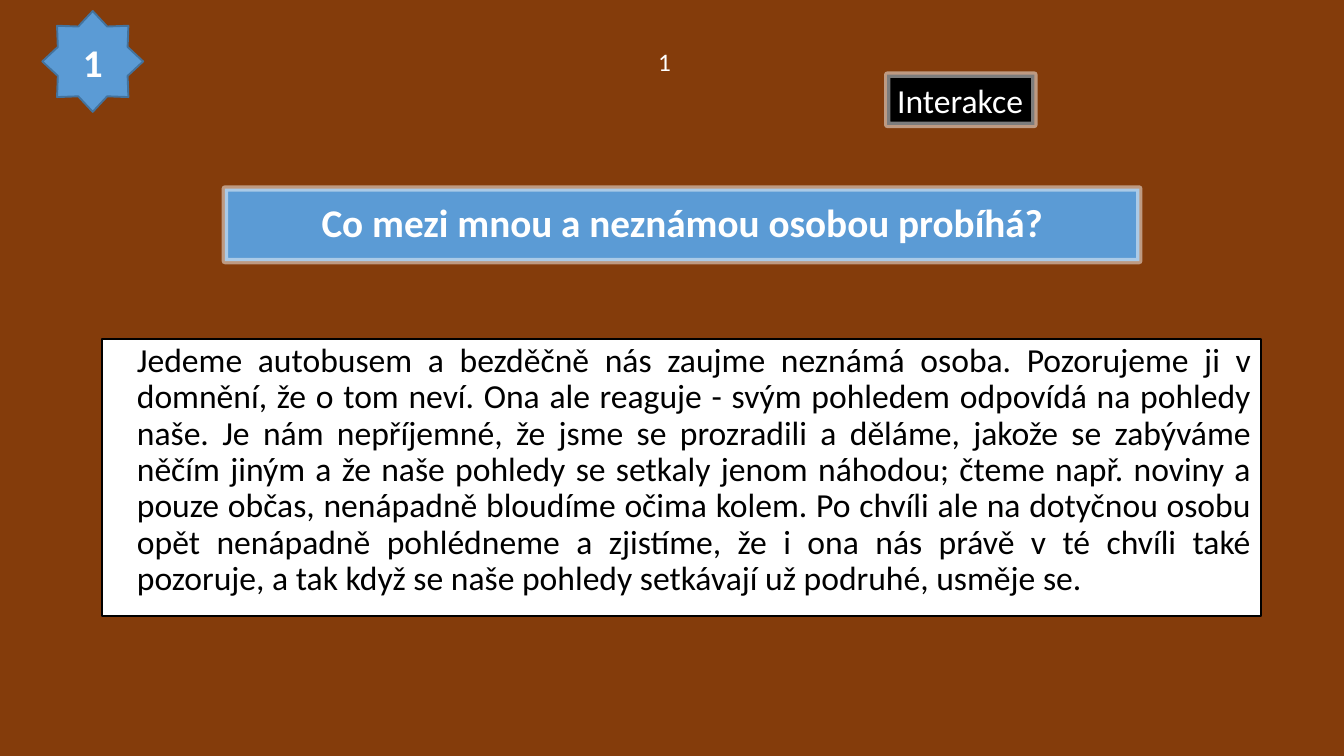
from dataclasses import dataclass

from lxml.etree import SubElement
from pptx import Presentation
from pptx.dml.color import RGBColor
from pptx.enum.shapes import MSO_SHAPE
from pptx.enum.text import MSO_ANCHOR, MSO_AUTO_SIZE, PP_ALIGN
from pptx.oxml.ns import qn
from pptx.slide import Slide
from pptx.util import Inches, Pt

BROWN = RGBColor(0x84, 0x3C, 0x0B)
BLUE = RGBColor(0x5B, 0x9B, 0xD5)
DARK_BLUE = RGBColor(0x43, 0x73, 0x9E)
PALE = RGBColor(0xF9, 0xF9, 0xF9)
BLACK = RGBColor(0, 0, 0)
WHITE = RGBColor(255, 255, 255)

STORY = (
    "Jedeme autobusem a bezděčně nás zaujme neznámá osoba. Pozorujeme ji v domnění, "
    "že o tom neví. Ona ale reaguje - svým pohledem odpovídá na pohledy naše. Je nám "
    "nepříjemné, že jsme se prozradili a děláme, jakože se zabýváme něčím jiným a že "
    "naše pohledy se setkaly jenom náhodou; čteme např. noviny a pouze občas, nenápadně "
    "bloudíme očima kolem. Po chvíli ale na dotyčnou osobu opět nenápadně pohlédneme a "
    "zjistíme, že i ona nás právě v té chvíli také pozoruje, a tak když se naše pohledy "
    "setkávají už podruhé, usměje se."
)


@dataclass(frozen=True)
class Outline:
    color: RGBColor
    width: float
    opacity: int = 100


@dataclass(frozen=True)
class Panel:
    text: str
    left: float
    top: float
    width: float
    height: float
    size: int
    fill: RGBColor | None = None
    outline: Outline | None = None
    color: RGBColor = WHITE
    bold: bool = False
    preset: MSO_SHAPE = MSO_SHAPE.RECTANGLE
    align: PP_ALIGN = PP_ALIGN.LEFT
    anchor: MSO_ANCHOR = MSO_ANCHOR.TOP
    line_spacing: float = 1.0
    space_before: int = 0
    indent: float = 0
    fits_text: bool = False


FRAME = Outline(PALE, 4.6, opacity=50)

PANELS = [
    Panel("Co mezi mnou a neznámou osobou probíhá?", 2.23, 1.87, 9.07, 0.72, 28,
          BLUE, FRAME, bold=True, align=PP_ALIGN.CENTER, anchor=MSO_ANCHOR.MIDDLE,
          line_spacing=0.9),
    Panel(STORY, 1.01, 3.36, 11.5, 2.75, 24, WHITE, Outline(BLACK, 1.35), BLACK,
          align=PP_ALIGN.JUSTIFY, line_spacing=0.9, space_before=10, indent=0.25),
    Panel("1", 0.42, 0.11, 1, 1, 28, BLUE, Outline(DARK_BLUE, 1.35), bold=True,
          preset=MSO_SHAPE.STAR_8_POINT, align=PP_ALIGN.CENTER, anchor=MSO_ANCHOR.MIDDLE),
    Panel("1", 6.43, 0.41, 0.33, 0.4, 18, fits_text=True),
    Panel("Interakce", 8.8, 0.74, 1.46, 0.5, 24, BLACK, FRAME, fits_text=True),
]


def draw_outline(box, outline: Outline) -> None:
    box.line.color.rgb = outline.color
    box.line.width = Pt(outline.width)
    if outline.opacity < 100:
        line = box.line.fill._xPr
        color = line.find(f".//{qn('a:srgbClr')}")
        SubElement(color, qn("a:alpha"), val=str(outline.opacity * 1000))
        SubElement(line, qn("a:round"))


def write_text(box, panel: Panel) -> None:
    frame = box.text_frame
    frame.word_wrap = not panel.fits_text
    frame.auto_size = MSO_AUTO_SIZE.SHAPE_TO_FIT_TEXT if panel.fits_text else MSO_AUTO_SIZE.NONE
    frame.vertical_anchor = panel.anchor
    para = frame.paragraphs[0]
    para.alignment = panel.align
    para.line_spacing = panel.line_spacing
    para.space_before = Pt(panel.space_before)
    if panel.indent:
        para._p.get_or_add_pPr().set("marL", str(Inches(panel.indent)))
    span = para.add_run()
    span.text = panel.text
    span.font.name = "Calibri"
    span.font.size = Pt(panel.size)
    span.font.bold = panel.bold
    span.font.color.rgb = panel.color


def draw_panel(page: Slide, panel: Panel) -> None:
    place = [Inches(n) for n in (panel.left, panel.top, panel.width, panel.height)]
    if panel.fill is None:
        box = page.shapes.add_textbox(*place)
    else:
        box = page.shapes.add_shape(panel.preset, *place)
        box.shadow.inherit = False
        box.fill.solid()
        box.fill.fore_color.rgb = panel.fill
    if panel.outline:
        draw_outline(box, panel.outline)
    write_text(box, panel)


def main() -> None:
    deck = Presentation()
    deck.slide_width, deck.slide_height = Inches(13.33), Inches(7.5)
    page = deck.slides.add_slide(deck.slide_layouts[6])
    page.background.fill.solid()
    page.background.fill.fore_color.rgb = BROWN
    for panel in PANELS:
        draw_panel(page, panel)
    deck.save("out.pptx")


if __name__ == "__main__":
    main()
